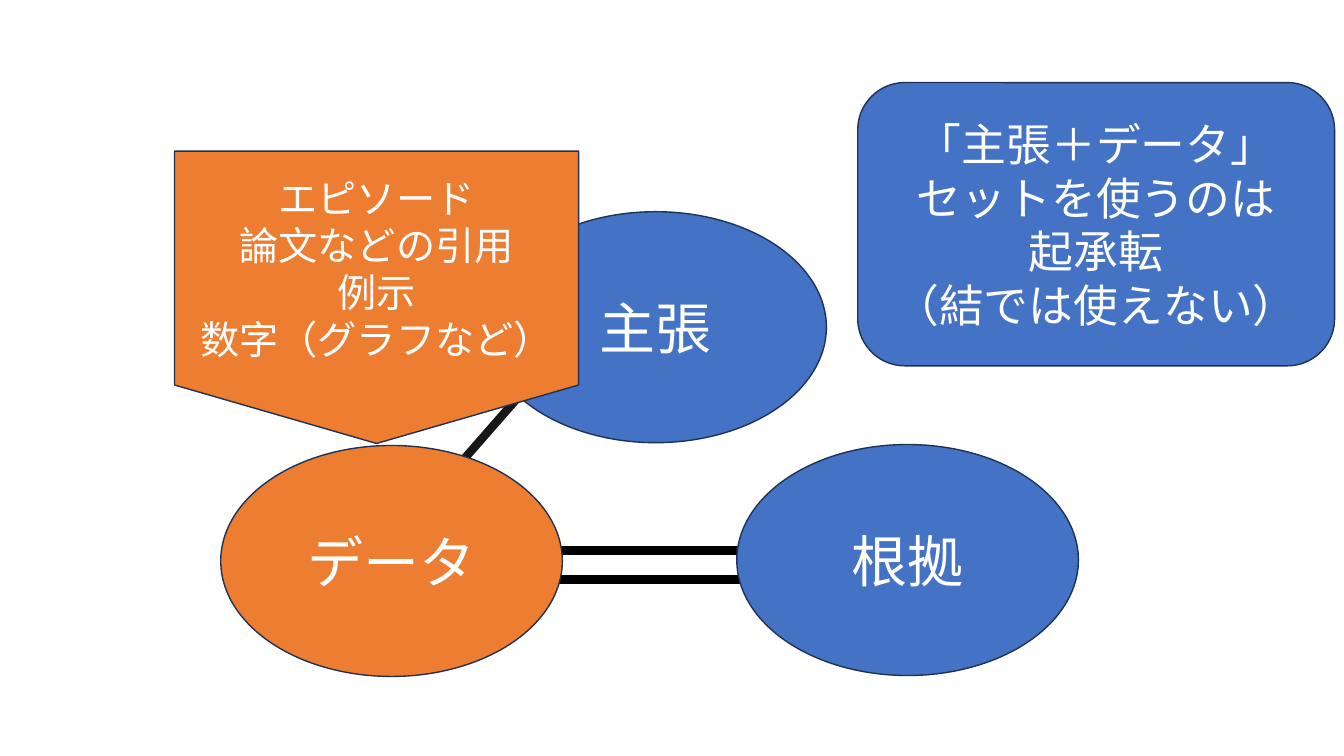
from lxml.etree import SubElement
from pptx import Presentation
from pptx.dml.color import RGBColor
from pptx.enum.shapes import MSO_CONNECTOR as Connector, MSO_SHAPE as Preset
from pptx.enum.text import MSO_ANCHOR as Anchor, PP_ALIGN as Align
from pptx.oxml.ns import qn
from pptx.util import Pt

COLORS = {
    "blue": "4472C4",
    "orange": "ED7D31",
    "outline": "1E3256",
    "white": "FFFFFF",
    "black": "000000",
    "charcoal": "181717",
}
FONT = "Noto Sans CJK JP"
OVAL_SIZE = (244, 165)

deck = Presentation()
deck.slide_width = Pt(960)
deck.slide_height = Pt(540)
page = deck.slides.add_slide(deck.slide_layouts[6])


def add_link(start, end, color):
    link = page.shapes.add_connector(
        Connector.STRAIGHT, *[Pt(value) for value in start + end]
    )
    link.line.color.rgb = RGBColor.from_string(COLORS[color])
    link.line.width = Pt(6)
    SubElement(link._element.spPr, qn("a:effectLst"))


def add_label(preset, position, size, fill, text, font_size):
    shape = page.shapes.add_shape(preset, *[Pt(value) for value in position + size])
    shape.shadow.inherit = False
    shape.fill.solid()
    shape.fill.fore_color.rgb = RGBColor.from_string(COLORS[fill])
    shape.line.color.rgb = RGBColor.from_string(COLORS["outline"])
    shape.line.width = Pt(1)
    frame = shape.text_frame
    frame.word_wrap = True
    frame.vertical_anchor = Anchor.MIDDLE
    frame.text = text
    for para in frame.paragraphs:
        para.alignment = Align.CENTER
        for span in para.runs:
            span.font.name = FONT
            span.font.size = Pt(font_size)
            span.font.color.rgb = RGBColor.from_string(COLORS["white"])
            SubElement(span._r.get_or_add_rPr(), qn("a:ea"), typeface=FONT)


add_link((395.3, 414), (547.2, 414), "black")
add_label(Preset.OVAL, (346.3, 151.2), OVAL_SIZE, "blue", "主張", 40)
add_link((371.5, 282.2), (330.5, 329), "charcoal")
add_link((395.3, 393.1), (540.7, 393.1), "black")
add_label(Preset.OVAL, (157.7, 318.2), OVAL_SIZE, "orange", "データ", 40)
add_label(Preset.OVAL, (526.3, 317.5), OVAL_SIZE, "blue", "根拠", 40)
add_label(
    Preset.FLOWCHART_OFFPAGE_CONNECTOR, (124.6, 108), (288.7, 208.8), "orange",
    "エピソード\n論文などの引用\n例示\n数字（グラフなど）", 28,
)
add_label(
    Preset.ROUNDED_RECTANGLE, (612.7, 59), (340.6, 202.3), "blue",
    "「主張＋データ」\nセットを使うのは\n起承転\n（結では使えない）", 32,
)

deck.save("out.pptx")
